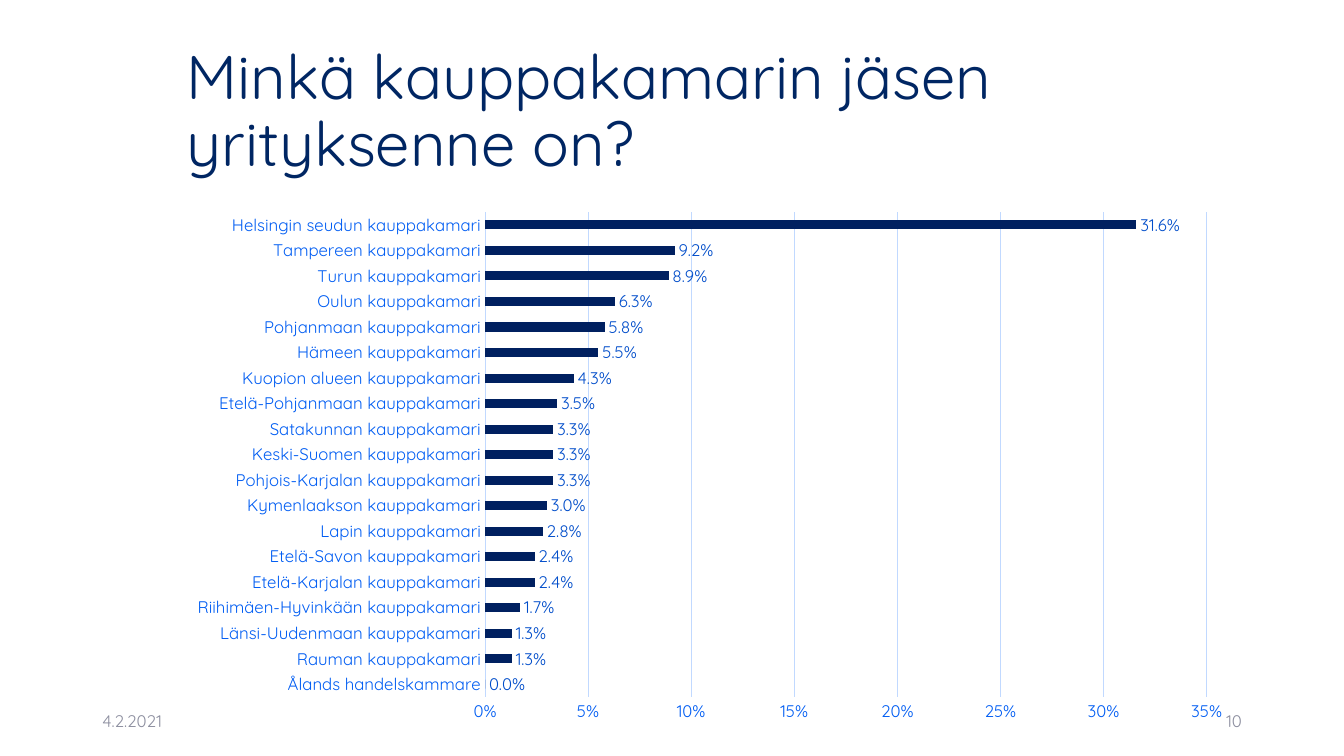
from dataclasses import dataclass

from lxml import etree
from pptx import Presentation
from pptx.chart.data import CategoryChartData
from pptx.dml.color import RGBColor
from pptx.enum.chart import XL_CHART_TYPE, XL_LABEL_POSITION, XL_TICK_MARK
from pptx.enum.text import MSO_ANCHOR, PP_ALIGN
from pptx.oxml.ns import qn
from pptx.util import Cm, Pt

BAR_CHART = XL_CHART_TYPE.BAR_CLUSTERED
OUTSIDE_END = XL_LABEL_POSITION.OUTSIDE_END
NO_TICK = XL_TICK_MARK.NONE
MIDDLE = MSO_ANCHOR.MIDDLE
LEFT, RIGHT = PP_ALIGN.LEFT, PP_ALIGN.RIGHT

FONT = "Quicksand"
NAVY = "002663"
BAR_NAVY = "002060"
AXIS_BLUE = "005DF3"
LABEL_BLUE = "004DCA"
GRID_BLUE = "C1D9FF"
FOOTER_GREY = "8C8E9F"

CONTENT_LEFT, CONTENT_WIDTH = Cm(4.45), Cm(26.9)
PLOT_AREA = {"x": 0.289, "y": 0.02, "w": 0.676, "h": 0.911}

MEMBER_SHARES = {
    "Helsingin seudun kauppakamari": 0.316,
    "Tampereen kauppakamari": 0.092,
    "Turun kauppakamari": 0.089,
    "Oulun kauppakamari": 0.063,
    "Pohjanmaan kauppakamari": 0.058,
    "Hämeen kauppakamari": 0.055,
    "Kuopion alueen kauppakamari": 0.043,
    "Etelä-Pohjanmaan kauppakamari": 0.035,
    "Satakunnan kauppakamari": 0.033,
    "Keski-Suomen kauppakamari": 0.033,
    "Pohjois-Karjalan kauppakamari": 0.033,
    "Kymenlaakson kauppakamari": 0.03,
    "Lapin kauppakamari": 0.028,
    "Etelä-Savon kauppakamari": 0.024,
    "Etelä-Karjalan kauppakamari": 0.024,
    "Riihimäen-Hyvinkään kauppakamari": 0.017,
    "Länsi-Uudenmaan kauppakamari": 0.013,
    "Rauman kauppakamari": 0.013,
    "Ålands handelskammare": 0,
}


@dataclass
class Footer:
    text: str
    left: float
    alignment: PP_ALIGN


FOOTERS = [Footer("4.2.2021", 2.33, LEFT), Footer("10", 23.93, RIGHT)]


def color(hex_value: str) -> RGBColor:
    return RGBColor.from_string(hex_value)


def style_font(font, size: float, hex_value: str) -> None:
    font.name = FONT
    font.size = Pt(size)
    font.color.rgb = color(hex_value)


def style_line(line) -> None:
    line.color.rgb = color(GRID_BLUE)
    line.width = Pt(0.75)


def add_title(slide) -> None:
    title = slide.shapes.title
    title.left, title.top = CONTENT_LEFT, Cm(1.01)
    title.width, title.height = CONTENT_WIDTH, Cm(3.68)
    title.text_frame.vertical_anchor = MIDDLE
    title.text_frame.word_wrap = True
    paragraph = title.text_frame.paragraphs[0]
    paragraph.alignment = LEFT
    paragraph.line_spacing = 0.9
    run = paragraph.add_run()
    run.text = "Minkä kauppakamarin jäsen yrityksenne on?"
    style_font(run.font, 44, NAVY)


def add_footer(slide, footer: Footer) -> None:
    shape = slide.shapes.add_textbox(Cm(footer.left), Cm(17.65), Cm(7.62), Cm(1.02))
    shape.text_frame.word_wrap = True
    shape.text_frame.vertical_anchor = MIDDLE
    paragraph = shape.text_frame.paragraphs[0]
    paragraph.alignment = footer.alignment
    run = paragraph.add_run()
    run.text = footer.text
    style_font(run.font, 12, FOOTER_GREY)


def place_plot_area(chart) -> None:
    """Fix the inner plot area as fractions of the chart frame."""
    plot_area = chart.plots[0]._element.getparent()
    for old_layout in plot_area.findall(qn("c:layout")):
        plot_area.remove(old_layout)
    layout = etree.Element(qn("c:layout"))
    plot_area.insert(0, layout)
    manual = etree.SubElement(layout, qn("c:manualLayout"))
    settings = {"layoutTarget": "inner", "xMode": "edge", "yMode": "edge", **PLOT_AREA}
    for tag, value in settings.items():
        etree.SubElement(manual, qn(f"c:{tag}")).set("val", str(value))


def add_share_chart(slide) -> None:
    data = CategoryChartData(number_format="0.0%")
    # Bar charts count categories from the bottom up.
    data.categories = list(reversed(MEMBER_SHARES))
    data.add_series("Series 1", list(reversed(MEMBER_SHARES.values())))
    frame = slide.shapes.add_chart(
        BAR_CHART, CONTENT_LEFT, Cm(5.08), CONTENT_WIDTH, Cm(13.41), data
    )
    chart = frame.chart
    chart.has_legend = False
    chart.has_title = False
    style_font(chart.font, 11, NAVY)

    for axis in (chart.category_axis, chart.value_axis):
        axis.major_tick_mark = axis.minor_tick_mark = NO_TICK
        style_font(axis.tick_labels.font, 12, AXIS_BLUE)
    style_line(chart.category_axis.format.line)

    value_axis = chart.value_axis
    value_axis.minimum_scale, value_axis.maximum_scale = 0, 0.35
    value_axis.major_unit = 0.05
    value_axis.tick_labels.number_format = "0%"
    value_axis.tick_labels.number_format_is_linked = False
    value_axis.format.line.fill.background()
    style_line(value_axis.major_gridlines.format.line)

    plot = chart.plots[0]
    plot.gap_width = 182
    plot.vary_by_categories = False
    bars = plot.series[0]
    bars.format.fill.solid()
    bars.format.fill.fore_color.rgb = color(BAR_NAVY)
    labels = bars.data_labels
    labels.show_value = True
    labels.position = OUTSIDE_END
    labels.number_format = "0.0%"
    labels.number_format_is_linked = False
    style_font(labels.font, 12, LABEL_BLUE)
    place_plot_area(chart)


def main() -> None:
    presentation = Presentation()
    presentation.slide_width, presentation.slide_height = Cm(33.87), Cm(19.05)
    title_only = presentation.slide_layouts[5]
    slide = presentation.slides.add_slide(title_only)
    add_title(slide)
    for footer in FOOTERS:
        add_footer(slide, footer)
    add_share_chart(slide)
    presentation.save("out.pptx")


if __name__ == "__main__":
    main()
